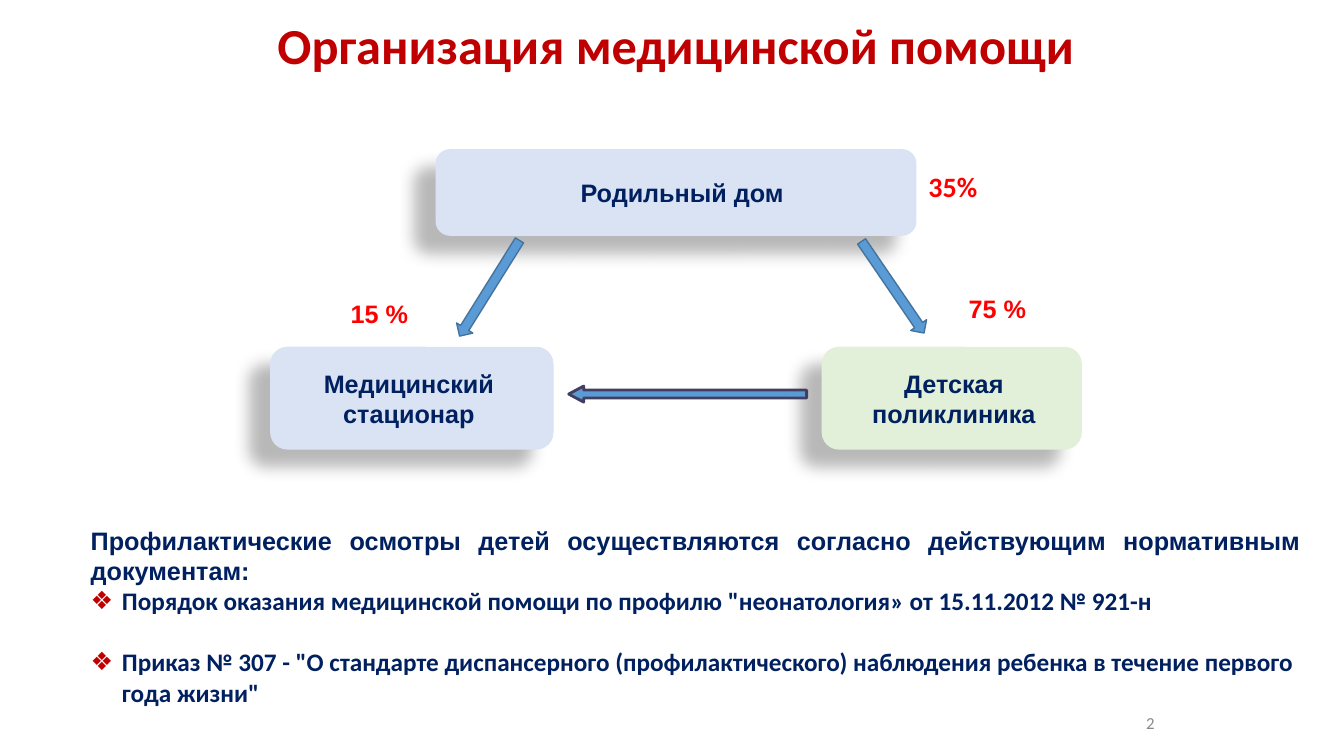
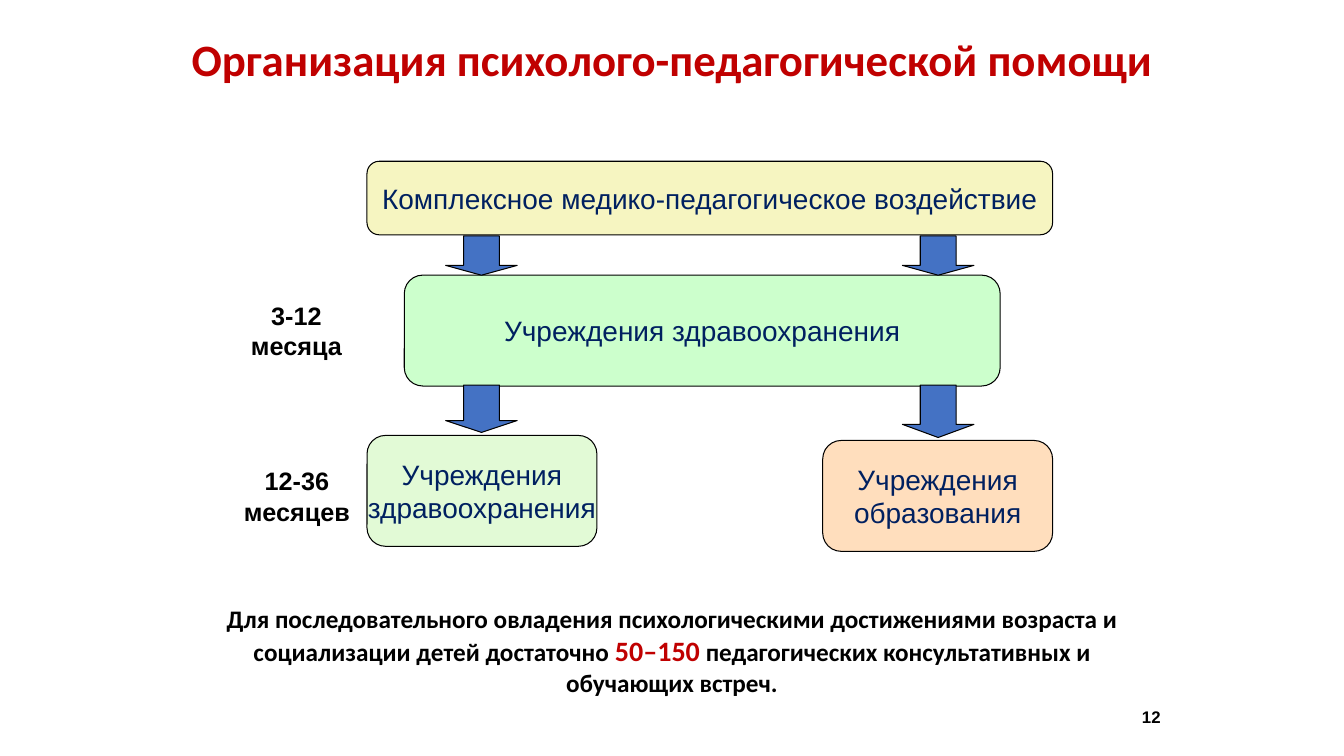
from dataclasses import dataclass

from lxml.etree import SubElement
from pptx import Presentation
from pptx.dml.color import RGBColor
from pptx.enum.shapes import MSO_SHAPE
from pptx.enum.text import MSO_ANCHOR, MSO_AUTO_SIZE, PP_ALIGN
from pptx.oxml.ns import qn
from pptx.util import Pt

PX = 9144  # 100 px to the inch


@dataclass(frozen=True)
class Theme:
    heading: str = "Calibri"
    body: str = "Arial"
    red: str = "C00000"
    bright_red: str = "FF0000"
    navy: str = "002060"
    black: str = "000000"
    grey: str = "898989"
    pale_blue: str = "DAE3F3"
    pale_green: str = "E2F0D9"
    sky: str = "5B9BD5"
    sky_edge: str = "43739E"
    dark_edge: str = "433E5F"
    arrow_blue: str = "4472C4"
    cream: str = "F6F5C1"
    mint: str = "CCFFCC"
    lime: str = "E2FAD6"
    peach: str = "FFDEBD"
    note: int = 12
    text: int = 18
    large: int = 20


theme = Theme()


def write(frame, text, font=theme.body, size=theme.text, color=theme.navy, bold=True,
          align=PP_ALIGN.CENTER, before=0, same_line=False):
    """Add text as a new paragraph, or as a span of the last one."""
    if same_line or not frame.text:
        para = frame.paragraphs[-1]
    else:
        para = frame.add_paragraph()
    para.alignment = align
    para.space_before = Pt(before)
    span = para.add_run()
    span.text = text
    span.font.name = font
    span.font.size = Pt(size)
    span.font.bold = bold
    span.font.color.rgb = RGBColor.from_string(color)
    return para


def add_block(page, kind, at, fill, edge=None, width=0.75):
    block = page.shapes.add_shape(kind, *(n * PX for n in at))
    block.shadow.inherit = False
    block.fill.solid()
    block.fill.fore_color.rgb = RGBColor.from_string(fill)
    if edge:
        block.line.color.rgb = RGBColor.from_string(edge)
        block.line.width = Pt(width)
    else:
        block.line.fill.background()
    block.text_frame.vertical_anchor = MSO_ANCHOR.MIDDLE
    return block


deck = Presentation()
deck.slide_width, deck.slide_height = 1333 * PX, 750 * PX
medical = deck.slides.add_slide(deck.slide_layouts[1])
teaching = deck.slides.add_slide(deck.slide_layouts[5])

# Titles
for page, at, size, text in (
    (medical, (33, 9, 1275, 71), 36, "Организация медицинской помощи"),
    (teaching, (169, 26, 996, 64), 32, "Организация психолого-педагогической помощи"),
):
    title = page.shapes.title
    title.left, title.top, title.width, title.height = (n * PX for n in at)
    title.text_frame.auto_size = MSO_AUTO_SIZE.NONE
    title.text_frame.vertical_anchor = MSO_ANCHOR.TOP
    write(title.text_frame, text, font=theme.heading, size=size, color=theme.red)

# Medical care: institutions, with the text moved sideways by shift
for at, fill, shift, text in (
    ((432, 148, 477, 86), theme.pale_blue, 6, "Родильный дом"),
    ((268, 344, 281, 102), theme.pale_blue, -3, "Медицинский стационар"),
    ((815, 344, 258, 102), theme.pale_green, 2, "Детская поликлиника"),
):
    box = add_block(medical, MSO_SHAPE.ROUNDED_RECTANGLE, at, fill)
    box.text_frame.word_wrap = True
    box.text_frame.margin_left = (10 + 2 * shift) * PX
    write(box.text_frame, text)
    effects = box._element.spPr.find(qn("a:effectLst"))
    shadow = SubElement(effects, qn("a:outerShdw"), blurRad=str(Pt(11.8)), dist=str(Pt(19.7)),
                        dir=str(141 * 60000), algn="ctr", rotWithShape="0")
    shade = SubElement(shadow, qn("a:srgbClr"), val=theme.black)
    SubElement(shade, qn("a:alpha"), val="28000")

for at, turn, head, edge, width in (
    ((476, 230, 19, 112), 32, 0.5, theme.sky_edge, 1),
    ((876, 230, 19, 110), 325.7, 0.5, theme.sky_edge, 1),
    ((674, 273, 16, 236), 90, 0.93, theme.dark_edge, 2),
):
    arrow = add_block(medical, MSO_SHAPE.DOWN_ARROW, at, theme.sky, edge, width)
    arrow.rotation = turn
    arrow.adjustments[1] = head

# Medical care: regulations
body = medical.placeholders[1]
body.left, body.top, body.width, body.height = (n * PX for n in (80, 516, 1220, 192))
frame = body.text_frame
frame.auto_size = MSO_AUTO_SIZE.NONE
intro = write(frame, "Профилактические осмотры детей осуществляются согласно действующим "
                     "нормативным документам:", align=PP_ALIGN.JUSTIFY)
properties = intro._p.get_or_add_pPr()
properties.set("marL", "0")
properties.set("indent", "0")
SubElement(properties, qn("a:buNone"))
for before, text in (
    (0, 'Порядок оказания медицинской помощи по профилю "неонатология» от 15.11.2012 № 921-н'),
    (22, 'Приказ № 307 - "О стандарте диспансерного (профилактического) наблюдения ребенка '
         'в течение первого года жизни"'),
):
    item = write(frame, text, font=theme.heading, align=PP_ALIGN.LEFT, before=before)
    properties = item._p.get_or_add_pPr()
    properties.set("marL", str(31 * PX))
    properties.set("indent", str(-31 * PX))
    bullet_color = SubElement(properties, qn("a:buClr"))
    SubElement(bullet_color, qn("a:srgbClr"), val=theme.red)
    SubElement(properties, qn("a:buFont"), typeface=theme.body)
    SubElement(properties, qn("a:buChar"), char="❖")

# Psychological and teaching help: stages
for at, fill, lines in (
    ((364, 160, 680, 73), theme.cream, ["Комплексное медико-педагогическое воздействие"]),
    ((401, 273, 591, 110), theme.mint, ["Учреждения здравоохранения"]),
    ((364, 432, 228, 110), theme.lime, ["Учреждения", "здравоохранения"]),
    ((816, 437, 228, 110), theme.peach, ["Учреждения", "образования"]),
):
    stage = add_block(teaching, MSO_SHAPE.ROUNDED_RECTANGLE, at, fill, theme.black)
    stage.text_frame.word_wrap = False
    for line in lines:
        write(stage.text_frame, line, size=theme.large, bold=False)

for left, lower_height in ((442, 47), (895, 52)):
    for top, height in ((234, 39), (382, lower_height)):
        arrow = add_block(teaching, MSO_SHAPE.DOWN_ARROW, (left, top, 71, height),
                          theme.arrow_blue, theme.black)
        arrow.adjustments[1] = 0.25

# Labels and page numbers
share = dict(color=theme.bright_red, align=PP_ALIGN.LEFT)
age = dict(color=theme.black)
number = dict(size=theme.note, align=PP_ALIGN.RIGHT)
for page, at, text, style in (
    (medical, (338, 291, 110, 40), "15 %", share),
    (medical, (951, 286, 106, 40), "75 %", share),
    (medical, (911, 163, 80, 44), "35%", dict(share, font=theme.heading, size=theme.large)),
    (medical, (922, 702, 233, 32), "2",
     dict(number, font=theme.heading, color=theme.grey, bold=False)),
    (teaching, (219, 293, 150, 70), "3-12 месяца", age),
    (teaching, (216, 457, 157, 70), "12-36 месяцев", age),
    (teaching, (928, 696, 233, 32), "12", dict(number, color=theme.black)),
):
    label = page.shapes.add_textbox(*(n * PX for n in at))
    label.text_frame.word_wrap = True
    write(label.text_frame, text, **style)

# Psychological and teaching help: conclusion
conclusion = teaching.shapes.add_textbox(*(n * PX for n in (184, 594, 965, 108)))
conclusion.text_frame.word_wrap = True
for text, size, color in (
    ("Для последовательного овладения психологическими достижениями возраста и "
     "социализации детей достаточно ", theme.text, theme.black),
    ("50–150", theme.large, theme.red),
    (" педагогических консультативных и обучающих встреч.", theme.text, theme.black),
):
    write(conclusion.text_frame, text, font=theme.heading, size=size, color=color,
          same_line=True)

deck.save("out.pptx")
